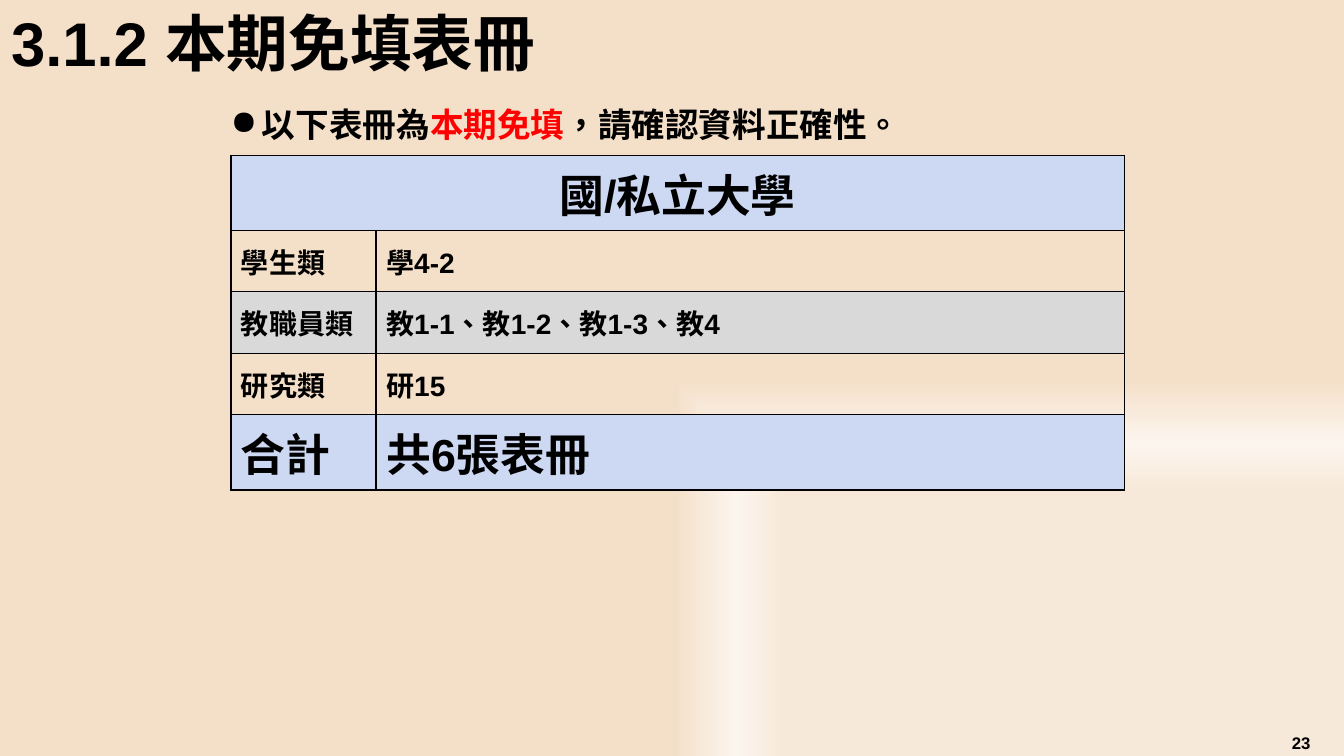
from pptx import Presentation
from pptx.dml.color import RGBColor
from pptx.enum.text import MSO_ANCHOR, MSO_AUTO_SIZE, PP_ALIGN
from pptx.oxml import parse_xml
from pptx.oxml.ns import nsdecls, qn
from pptx.util import Inches, Pt
from lxml.etree import SubElement

CJK = "Noto Sans CJK SC"
BLUE, GREY, BLACK, RED = "CDD9F3", "D9D9D9", "000000", "FF0000"
STOPS = [(0, "F7E8D7"), (70, "F7E9D9"), (83, "FCF5EE"), (100, "F4DFC8")]
ROWS = [
    ("學生類", "學4-2", 20, None),
    ("教職員類", "教1-1、教1-2、教1-3、教4", 20, GREY),
    ("研究類", "研15", 20, None),
    ("合計", "共6張表冊", 32, BLUE),
]


def paint(color):
    return RGBColor.from_string(color)


def style(run, size, color=BLACK):
    font = run.font
    font.size, font.bold, font.name = Pt(size), True, "Arial"
    font.color.rgb = paint(color)
    props = run._r.get_or_add_rPr()
    props.set("lang", "zh-TW")
    SubElement(props, qn("a:ea")).set("typeface", CJK)


def add_back(slide):
    stops = "".join(
        f'<a:gs pos="{pos * 1000}"><a:srgbClr val="{color}"/></a:gs>'
        for pos, color in STOPS)
    back = parse_xml(
        f'<p:bg {nsdecls("p", "a")}><p:bgPr><a:gradFill rotWithShape="1">'
        f'<a:gsLst>{stops}</a:gsLst><a:path path="rect">'
        '<a:fillToRect l="100000" t="100000"/></a:path></a:gradFill>'
        '<a:effectLst/></p:bgPr></p:bg>')
    slide.element.cSld.insert(0, back)


def add_title(slide, left, top, width, height):
    title = slide.shapes.title
    title.left, title.top = Inches(left), Inches(top)
    title.width, title.height = Inches(width), Inches(height)
    frame = title.text_frame
    frame.text = "3.1.2 本期免填表冊"
    frame.auto_size = MSO_AUTO_SIZE.NONE
    frame.vertical_anchor = MSO_ANCHOR.MIDDLE
    para = frame.paragraphs[0]
    para.alignment, para.line_spacing = PP_ALIGN.LEFT, 0.9
    style(para.runs[0], 44)


def add_box(slide, left, top, width, height):
    box = slide.shapes.add_textbox(
        Inches(left), Inches(top), Inches(width), Inches(height))
    frame = box.text_frame
    frame.word_wrap = True
    return frame


def add_note(slide, left, top, width, height):
    frame = add_box(slide, left, top, width, height)
    frame.vertical_anchor = MSO_ANCHOR.MIDDLE
    para = frame.paragraphs[0]
    # Bullet with hanging indent
    props = para._p.get_or_add_pPr()
    indent = Inches(0.31)
    props.set("marL", str(indent))
    props.set("indent", str(-indent))
    tint = SubElement(props, qn("a:buClr"))
    SubElement(tint, qn("a:srgbClr")).set("val", BLACK)
    SubElement(props, qn("a:buChar")).set("char", "●")
    for text, color in [("以下表冊為", BLACK), ("本期免填", RED),
                        ("，請確認資料正確性。", BLACK)]:
        run = para.add_run()
        run.text = text
        style(run, 24, color)


def fill_cell(cell, text, size, color):
    props = cell._tc.get_or_add_tcPr()
    for side in "LRTB":
        props.append(parse_xml(
            f'<a:ln{side} {nsdecls("a")} w="{Pt(1)}"><a:solidFill>'
            f'<a:srgbClr val="{BLACK}"/></a:solidFill></a:ln{side}>'))
    if color:
        cell.fill.solid()
        cell.fill.fore_color.rgb = paint(color)
    else:
        cell.fill.background()
    cell.vertical_anchor = MSO_ANCHOR.MIDDLE
    cell.text = text
    for run in cell.text_frame.paragraphs[0].runs:
        style(run, size)


def add_forms(slide, left, top, width, height):
    table = slide.shapes.add_table(
        len(ROWS) + 1, 2, Inches(left), Inches(top),
        Inches(width), Inches(height)).table
    table.first_row = table.horz_banding = False
    first = 1.44
    table.columns[0].width = Inches(first)
    table.columns[1].width = Inches(width - first)
    for row in table.rows:
        row.height = Inches(0.61)
    table.rows[0].height = Inches(0.7)
    # Header across both columns
    head = table.cell(0, 0)
    fill_cell(head, "國/私立大學", 32, BLUE)
    fill_cell(table.cell(0, 1), "", 32, BLUE)
    head.merge(table.cell(0, 1))
    head.vertical_anchor = MSO_ANCHOR.TOP
    head.text_frame.paragraphs[0].alignment = PP_ALIGN.CENTER
    # Categories and total
    for row, (kind, forms, size, color) in enumerate(ROWS, 1):
        fill_cell(table.cell(row, 0), kind, size, color)
        fill_cell(table.cell(row, 1), forms, size, color)


def add_page(slide, left, top, width, height):
    frame = add_box(slide, left, top, width, height)
    frame.text = "23"
    para = frame.paragraphs[0]
    para.alignment = PP_ALIGN.CENTER
    style(para.runs[0], 12)


def main():
    deck = Presentation()
    deck.slide_width, deck.slide_height = Inches(13.33), Inches(7.5)
    slide = deck.slides.add_slide(deck.slide_layouts.get_by_name("Title Only"))
    add_back(slide)
    add_title(slide, 0.01, 0.13, 8.79, 0.67)
    add_forms(slide, 2.29, 1.54, 8.86, 3.14)
    add_note(slide, 2.19, 0.94, 6.68, 0.59)
    add_page(slide, 12.48, 7.22, 0.85, 0.28)
    deck.save("out.pptx")


if __name__ == "__main__":
    main()
